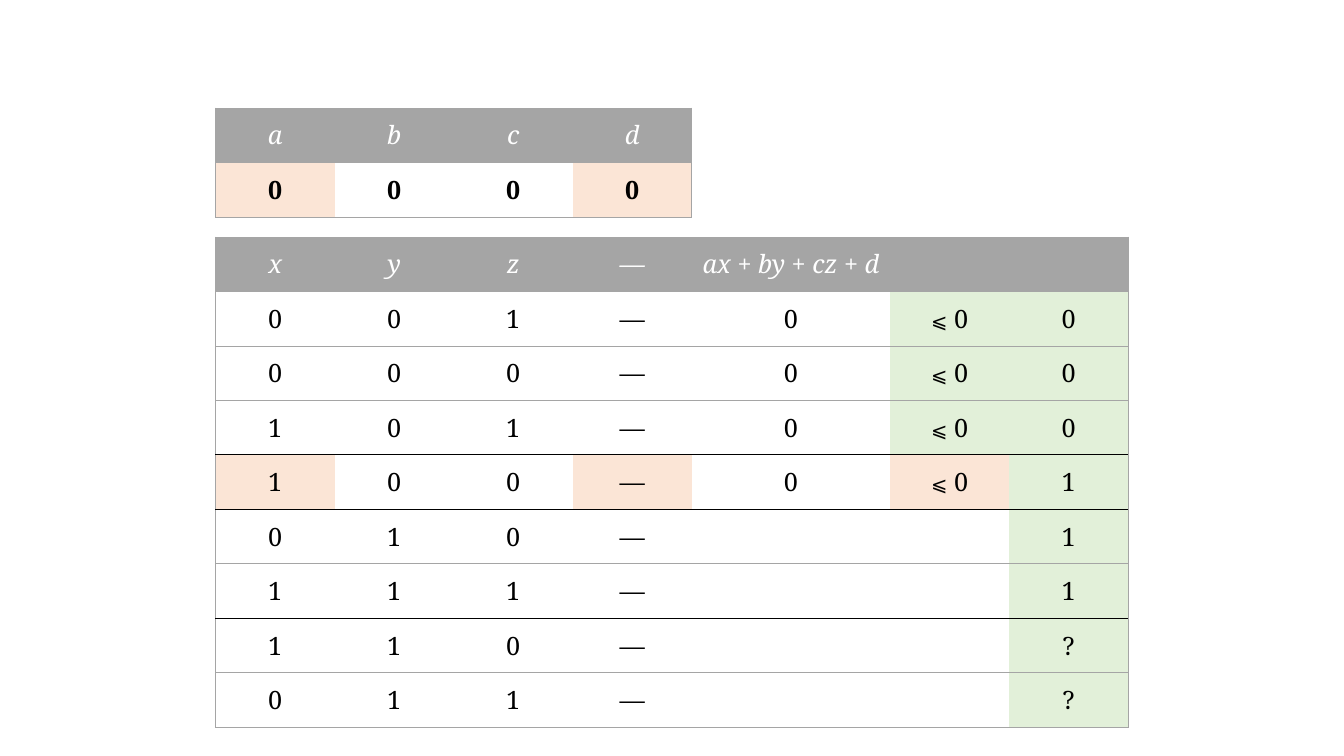
from lxml import etree
from pptx import Presentation
from pptx.dml.color import RGBColor
from pptx.enum.text import MSO_ANCHOR, PP_ALIGN
from pptx.oxml.ns import qn
from pptx.util import Inches, Pt

CENTER = PP_ALIGN.CENTER
MIDDLE = MSO_ANCHOR.MIDDLE

FONT = "Noto Serif"
GREY, BLACK, WHITE = "A5A5A5", "000000", "FFFFFF"
ORANGE, GREEN = "FBE5D6", "E2F0D9"
LEFT, ROW_HEIGHT = 2.14, 0.5
NARROW, WIDE = 1.18, 1.97

WEIGHTS = ["abcd", "0000"]
SAMPLES = [
    ["x", "y", "z", "—", "ax + by + cz + d", "", ""],
    ["0", "0", "1", "—", "0", "⩽ 0", "0"],
    ["0", "0", "0", "—", "0", "⩽ 0", "0"],
    ["1", "0", "1", "—", "0", "⩽ 0", "0"],
    ["1", "0", "0", "—", "0", "⩽ 0", "1"],
    ["0", "1", "0", "—", "", "", "1"],
    ["1", "1", "1", "—", "", "", "1"],
    ["1", "1", "0", "—", "", "", "?"],
    ["0", "1", "1", "—", "", "", "?"],
]
CURRENT_SAMPLE = 4
BLACK_RULES = {3, 4, 6}  # rows with a black line below


def color(hex_code):
    return RGBColor.from_string(hex_code)


def set_border(cell, side, hex_code):
    """Draw one cell edge (L, R, T or B), or clear it when hex_code is None."""
    width = Pt(1 if hex_code == BLACK else 0.5)
    line = etree.SubElement(cell._tc.get_or_add_tcPr(), qn(f"a:ln{side}"), w=str(width))
    if hex_code is None:
        etree.SubElement(line, qn("a:noFill"))
    else:
        fill = etree.SubElement(line, qn("a:solidFill"))
        etree.SubElement(fill, qn("a:srgbClr"), val=hex_code)


def split_spans(text):
    """Split text so that operators can be styled apart from the terms."""
    if " + " in text:
        terms = text.split(" + ")
        return [part for term in terms for part in (term, " + ")][:-1]
    if text.startswith("⩽"):
        return [text[0], text[1:]]
    return [text] if text else []


def write_cell(cell, text, header, bold):
    cell.margin_top = cell.margin_bottom = Inches(0.1)
    cell.vertical_anchor = MIDDLE
    para = cell.text_frame.paragraphs[0]
    para.alignment = CENTER
    for part in split_spans(text):
        span = para.add_run()
        span.text = part
        span.font.name = FONT
        span.font.size = Pt(14 if part == "⩽" else 18)
        span.font.bold = bold
        span.font.italic = header and part != " + "
        span.font.color.rgb = color(WHITE if header else BLACK)


def add_grid(page, top, widths, rows, fill_for, black_rules=(), bold_body=False):
    """Place a table with a grey header, a grey frame and lines between rows."""
    frame = page.shapes.add_table(
        len(rows), len(widths), Inches(LEFT), Inches(top),
        Inches(sum(widths)), Inches(ROW_HEIGHT * len(rows)))
    table = frame.table
    table.first_row = table.horz_banding = False
    for column, width in zip(table.columns, widths):
        column.width = Inches(width)
    rules = [GREY] + [BLACK if r in black_rules else GREY for r in range(len(rows))]
    last = len(widths) - 1
    for r, texts in enumerate(rows):
        header = r == 0
        for c, text in enumerate(texts):
            cell = table.cell(r, c)
            write_cell(cell, text, header, bold_body and not header)
            set_border(cell, "L", GREY if c == 0 else None)
            set_border(cell, "R", GREY if c == last else None)
            set_border(cell, "T", rules[r])
            set_border(cell, "B", rules[r + 1])
            fill = GREY if header else fill_for(r, c)
            if fill:
                cell.fill.solid()
                cell.fill.fore_color.rgb = color(fill)
            else:
                cell.fill.background()


def add_weights(page, top):
    add_grid(page, top, [NARROW] * 4, WEIGHTS,
             lambda r, c: ORANGE if c in (0, 3) else None, bold_body=True)


def add_samples(page, top):
    def fill_for(r, c):
        if r == CURRENT_SAMPLE and c in (0, 3, 5):
            return ORANGE
        if c == 6 or (c == 5 and r < CURRENT_SAMPLE):
            return GREEN
        return None

    widths = [NARROW] * 4 + [WIDE] + [NARROW] * 2
    add_grid(page, top, widths, SAMPLES, fill_for, BLACK_RULES)


def main():
    deck = Presentation()
    deck.slide_width, deck.slide_height = Inches(13.33), Inches(7.5)
    page = deck.slides.add_slide(deck.slide_layouts[6])
    add_samples(page, 2.35)
    add_weights(page, 1.07)
    deck.save("out.pptx")


if __name__ == "__main__":
    main()
